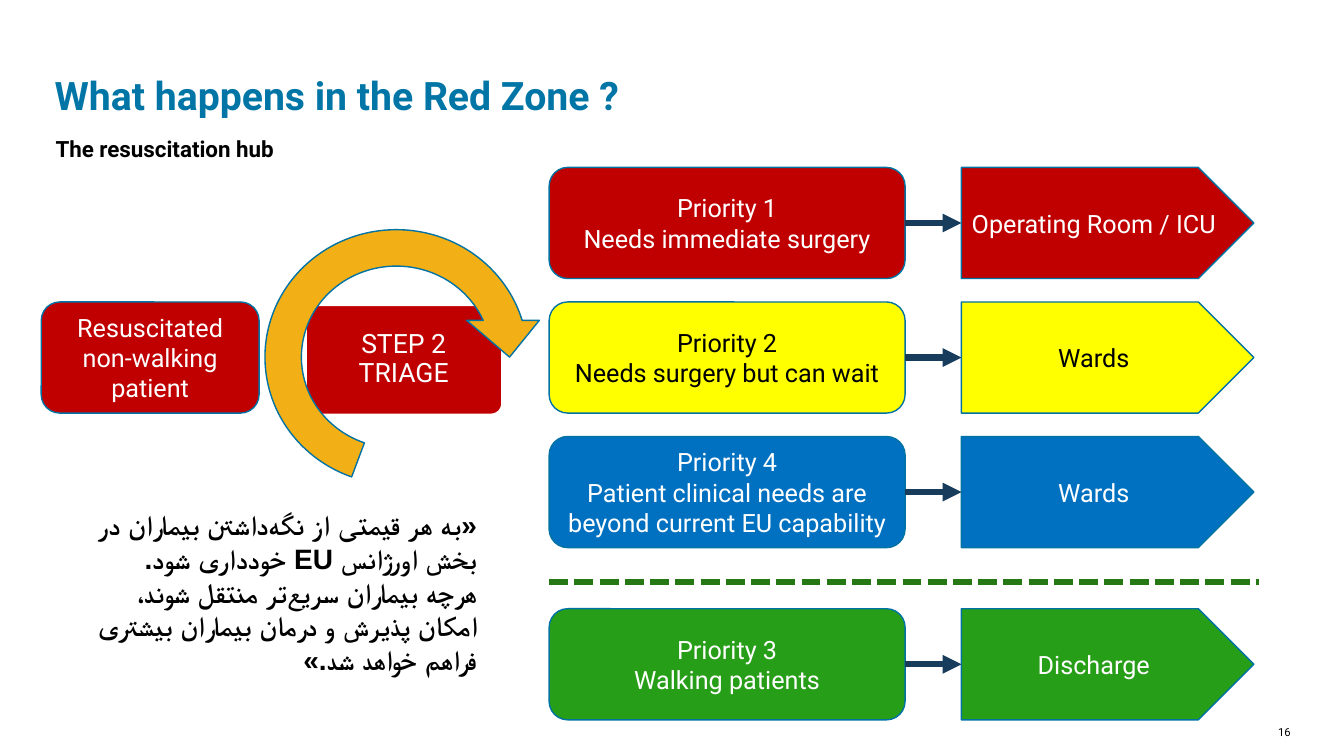
from dataclasses import dataclass

import pptx
import pptx.dml.color
import pptx.enum.dml
import pptx.enum.shapes
import pptx.enum.text
import pptx.oxml
import pptx.oxml.ns
import pptx.shapes.autoshape
import pptx.shapes.connector
import pptx.slide
import pptx.text.text
import pptx.util

Cm = pptx.util.Cm
Pt = pptx.util.Pt
Shapes = pptx.enum.shapes.MSO_SHAPE
Align = pptx.enum.text.PP_ALIGN
Anchor = pptx.enum.text.MSO_ANCHOR
qn = pptx.oxml.ns.qn

WHITE, BLACK, RED, OUTLINE, NAVY = "FFFFFF", "000000", "C00000", "0073A4", "183C5C"
PRIORITY_LEFT, PRIORITY_WIDTH = 13.84, 8.97
DESTINATION_LEFT, DESTINATION_WIDTH = 24.23, 7.37
ROW_TOP, ROW_PITCH, BOX_HEIGHT = 4.22, 3.39, 2.8
DISCHARGE_TOP = 15.34
NON_JOINER = chr(0x200C)


@dataclass
class Box:
    left: float
    top: float
    width: float
    height: float


@dataclass
class Style:
    size: float
    color: str = BLACK
    bold: bool = False
    align: Align = Align.LEFT
    line_spacing: float = 1.0
    font: str = "Roboto"
    right_to_left: bool = False


@dataclass
class Label:
    box: Box
    lines: list[str]
    style: Style
    anchor: Anchor
    insets: tuple[float, float, float, float]


@dataclass
class Pathway:
    top: float
    priority: list[str]
    destination: str
    fill: str
    text_color: str = WHITE


def rgb(value: str) -> pptx.dml.color.RGBColor:
    return pptx.dml.color.RGBColor.from_string(value)


def write_text(frame: pptx.text.text.TextFrame, lines: list[str], style: Style) -> None:
    frame.word_wrap = True
    for index, line in enumerate(lines):
        paragraph = frame.paragraphs[0] if index == 0 else frame.add_paragraph()
        paragraph.text = line
        paragraph.alignment = style.align
        paragraph.line_spacing = style.line_spacing
        paragraph.font.size = Pt(style.size)
        paragraph.font.bold = style.bold
        paragraph.font.color.rgb = rgb(style.color)
        paragraph.font.name = style.font
        if style.right_to_left:
            properties = paragraph._p.get_or_add_pPr()
            properties.set("rtl", "1")
            complex_font = pptx.oxml.parse_xml(
                f'<a:cs {pptx.oxml.ns.nsdecls("a")} typeface="{style.font}"/>')
            properties.find(qn("a:defRPr")).append(complex_font)


def add_label(slide: pptx.slide.Slide, label: Label) -> None:
    box = label.box
    shape = slide.shapes.add_textbox(
        Cm(box.left), Cm(box.top), Cm(box.width), Cm(box.height))
    frame = shape.text_frame
    frame.vertical_anchor = label.anchor
    left, top, right, bottom = label.insets
    frame.margin_left, frame.margin_top = Cm(left), Cm(top)
    frame.margin_right, frame.margin_bottom = Cm(right), Cm(bottom)
    write_text(frame, label.lines, label.style)


def add_block(slide: pptx.slide.Slide, kind: Shapes, box: Box, fill: str,
              outline: str | None = OUTLINE, lines: list[str] | None = None,
              style: Style | None = None) -> pptx.shapes.autoshape.Shape:
    shape = slide.shapes.add_shape(
        kind, Cm(box.left), Cm(box.top), Cm(box.width), Cm(box.height))
    shape.shadow.inherit = False
    shape.fill.solid()
    shape.fill.fore_color.rgb = rgb(fill)
    if outline:
        shape.line.color.rgb = rgb(outline)
        shape.line.width = Pt(1)
    else:
        shape.line.fill.background()
    if lines and style:
        shape.text_frame.vertical_anchor = Anchor.MIDDLE
        write_text(shape.text_frame, lines, style)
    return shape


def add_line(slide: pptx.slide.Slide, left: float, right: float, y: float,
             color: str) -> pptx.shapes.connector.Connector:
    connector = slide.shapes.add_connector(
        pptx.enum.shapes.MSO_CONNECTOR.STRAIGHT, Cm(left), Cm(y), Cm(right), Cm(y))
    connector.line.color.rgb = rgb(color)
    connector.line.width = Pt(4.5)
    connector._element.spPr.append(
        pptx.oxml.parse_xml(f'<a:effectLst {pptx.oxml.ns.nsdecls("a")}/>'))
    return connector


def add_pathway(slide: pptx.slide.Slide, pathway: Pathway) -> None:
    style = Style(18, pathway.text_color, align=Align.CENTER)
    priority = add_block(
        slide, Shapes.ROUNDED_RECTANGLE,
        Box(PRIORITY_LEFT, pathway.top, PRIORITY_WIDTH, BOX_HEIGHT),
        pathway.fill, lines=pathway.priority, style=style)
    destination = add_block(
        slide, Shapes.PENTAGON,
        Box(DESTINATION_LEFT, pathway.top, DESTINATION_WIDTH, BOX_HEIGHT),
        pathway.fill, lines=[pathway.destination], style=style)
    arrow = add_line(slide, PRIORITY_LEFT + PRIORITY_WIDTH, DESTINATION_LEFT,
                     pathway.top + BOX_HEIGHT / 2, NAVY)
    arrow.begin_connect(priority, 3)
    arrow.end_connect(destination, 1)
    arrow.line._get_or_add_ln().append(pptx.oxml.parse_xml(
        f'<a:tailEnd {pptx.oxml.ns.nsdecls("a")} type="triangle"/>'))


def add_triage(slide: pptx.slide.Slide) -> None:
    panel = add_block(slide, Shapes.ROUNDED_RECTANGLE,
                      Box(7.72, 7.7, 4.93, 2.74), RED, WHITE)
    panel.adjustments[0] = 0.1
    add_block(slide, Shapes.RECTANGLE, Box(7.8, 7.77, 4.75, 2.57), RED, None,
              ["STEP 2 TRIAGE"], Style(19, WHITE, align=Align.CENTER, line_spacing=0.9))
    add_block(slide, Shapes.ROUNDED_RECTANGLE,
              Box(1.04, ROW_TOP + ROW_PITCH, 5.49, BOX_HEIGHT), RED,
              lines=["Resuscitated non-walking patient"],
              style=Style(18, WHITE, align=Align.CENTER))
    cycle = add_block(slide, Shapes.CIRCULAR_ARROW, Box(6.22, 5.33, 7.54, 7.34), "F3AF16")
    for index, value in enumerate([0.125, 11.42, 204.58, 66.27, 0.125]):
        cycle.adjustments[index] = value


LABELS = [
    Label(Box(31.72, 18.29, 0.81, 0.51), ["16"], Style(8, align=Align.RIGHT),
          Anchor.TOP, (0, 0, 0, 0)),
    Label(Box(1.33, 0.99, 22.66, 2.01), ["What happens in the Red Zone ?"],
          Style(28, "0075A6", True, line_spacing=0.9), Anchor.BOTTOM, (0.05, 0, 1, 0)),
    Label(Box(1.35, 3.3, 22.66, 0.81), ["The resuscitation hub"],
          Style(16, bold=True, line_spacing=1.1), Anchor.MIDDLE, (0.05, 0, 0.05, 0)),
    Label(Box(1.88, 12.67, 10.39, 4.52),
          [f"«به هر قیمتی از نگه{NON_JOINER}داشتن بیماران در بخش اورژانس EU خودداری شود.",
           f"هرچه بیماران سریع{NON_JOINER}تر منتقل شوند، امکان پذیرش و درمان بیماران بیشتری فراهم خواهد شد.»"],
          Style(20, bold=True, align=Align.RIGHT, font="Arial", right_to_left=True),
          Anchor.TOP, (0.25, 0.13, 0.25, 0.13)),
]

PATHWAYS = [
    Pathway(ROW_TOP, ["Priority 1", "Needs immediate surgery"],
            "Operating Room / ICU", RED),
    Pathway(ROW_TOP + ROW_PITCH, ["Priority 2", "Needs surgery but can wait"],
            "Wards", "FFFF00", BLACK),
    Pathway(ROW_TOP + 2 * ROW_PITCH,
            ["Priority 4", "Patient clinical needs are beyond current EU capability"],
            "Wards", "0070C0"),
    Pathway(DISCHARGE_TOP, ["Priority 3", "Walking patients"], "Discharge", "279E17"),
]


def main() -> None:
    presentation = pptx.Presentation()
    presentation.slide_width, presentation.slide_height = Cm(33.87), Cm(19.05)
    slide = presentation.slides.add_slide(presentation.slide_layouts[6])
    add_triage(slide)
    for label in LABELS:
        add_label(slide, label)
    for pathway in PATHWAYS:
        add_pathway(slide, pathway)
    divider = add_line(slide, PRIORITY_LEFT, 31.72, 14.66, "267815")
    divider.line.dash_style = pptx.enum.dml.MSO_LINE.SQUARE_DOT
    presentation.save("out.pptx")


if __name__ == "__main__":
    main()
